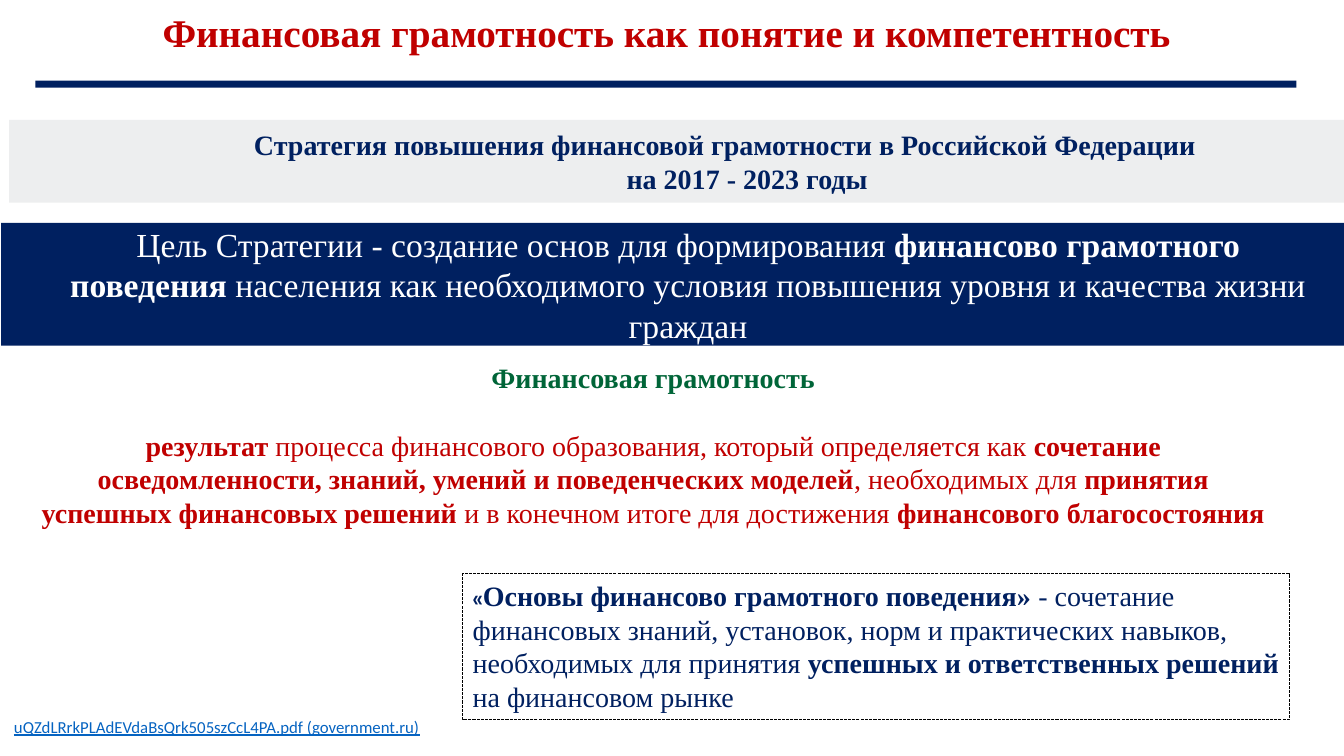
from lxml.etree import SubElement
from pptx import Presentation
from pptx.dml.color import RGBColor as Rgb
from pptx.enum.dml import MSO_LINE as Dash
from pptx.enum.shapes import MSO_SHAPE as Kind
from pptx.enum.text import MSO_ANCHOR as Anchor, PP_ALIGN as Align
from pptx.oxml.ns import qn
from pptx.util import Inches, Pt

WIDE, HIGH = Inches(13.33), Inches(7.5)
SERIF = "Times New Roman"

THEME = {
    "navy": "002060", "grey": "DCDEE0", "black": "000000",
    "text": {  # font, size, colour
        "title": (SERIF, 28, "C00000"),
        "plan": (SERIF, 20, "002060"),
        "goal": (SERIF, 24, "FFFFFF"),
        "term": (SERIF, 20, "006538"),
        "sense": (SERIF, 20, "C00000"),
        "quote": ("Arial Narrow", 16, "002060"),
        "link": ("Calibri", 12, "0563C1"),
    },
}

# Text between asterisks is bold. Each paragraph is a list of (style, text).
PLAN = [
    [("plan", "*Стратегия повышения финансовой грамотности в Российской Федерации*")],
    [("plan", "*на 2017 - 2023 годы*")],
]
GOAL = [[("goal", "Цель Стратегии - создание основ для формирования *финансово "
                  "грамотного поведения* населения как необходимого условия "
                  "повышения уровня и качества жизни граждан")]]
TERM = [
    [("term", "*Финансовая грамотность*")],
    [("sense", "*результат* процесса финансового образования, который определяется "
               "как *сочетание осведомленности, знаний, умений и поведенческих "
               "моделей*, необходимых для *принятия успешных финансовых решений *"
               "и в конечном итоге для достижения *финансового благосостояния*")],
]
BASICS = [[("quote", "*«*"),
           ("plan", "*Основы финансово грамотного поведения» *- сочетание финансовых "
                    "знаний, установок, норм и практических навыков, необходимых для "
                    "принятия *успешных и ответственных решений *на финансовом рынке")]]
TITLE = [[("title", "*Финансовая грамотность как понятие и компетентность*")]]
LINK = [[("link", "uQZdLRrkPLAdEVdaBsQrk505szCcL4PA.pdf (government.ru)")]]

# Places are left, top, width, height in per cent of the slide.
PARTS = [
    {"at": (0.68, 15.87, 100, 10.93), "fill": "grey", "alpha": 50, "text": PLAN,
     "pad": 0, "mid": True, "align": Align.CENTER, "indents": (0.87, 1.31)},
    {"at": (0.08, 29.47, 100.28, 16.27), "fill": "navy"},
    {"at": (2.63, 10.67, 93.83, 0.93), "fill": "navy"},
    {"at": (4.28, 29.07, 93.83, 17.07), "text": GOAL, "pad": 0.03, "mid": True,
     "align": Align.CENTER},
    {"at": (1.95, 47.07, 93.3, 23.73), "text": TERM, "align": Align.CENTER, "gap": 24},
    {"at": (34.43, 75.87, 61.5, 19.33), "line": "black", "text": BASICS},
    {"at": (6.83, 0.4, 85.5, 7.6), "text": TITLE, "align": Align.CENTER},
    {"at": (0.3, 94.13, 50.33, 4), "text": LINK, "under": True},
]


def apply(target, values):
    for name, value in values.items():
        setattr(target, name, value)


def paint(shape, part):
    shape.shadow.inherit = False
    if "fill" in part:
        shape.fill.solid()
        shape.fill.fore_color.rgb = Rgb.from_string(THEME[part["fill"]])
    else:
        shape.fill.background()
    if "alpha" in part:
        tint = shape.fill._xPr.find(".//" + qn("a:srgbClr"))
        SubElement(tint, qn("a:alpha")).set("val", str(part["alpha"] * 1000))
    if "line" in part:
        shape.line.color.rgb = Rgb.from_string(THEME[part["line"]])
        apply(shape.line, {"width": Pt(0.75), "dash_style": Dash.SQUARE_DOT})
    else:
        shape.line.fill.background()


def add_runs(para, pieces, under):
    for style, text in pieces:
        face, size, tone = THEME["text"][style]
        for index, words in enumerate(text.split("*")):
            if words:
                run = para.add_run()
                run.text = words
                apply(run.font, {"name": face, "size": Pt(size),
                                 "bold": index % 2 == 1, "underline": under})
                run.font.color.rgb = Rgb.from_string(tone)


def write(frame, part):
    apply(frame, {"word_wrap": True,
                  "vertical_anchor": Anchor.MIDDLE if part.get("mid") else Anchor.TOP})
    if "pad" in part:
        sides = ("left", "top", "right", "bottom")
        apply(frame, {f"margin_{side}": Inches(part["pad"]) for side in sides})
    for index, pieces in enumerate(part["text"]):
        para = frame.add_paragraph() if index else frame.paragraphs[0]
        para.alignment = part.get("align", Align.LEFT)
        if index and "gap" in part:
            para.space_before = Pt(part["gap"])
        if "indents" in part:
            para._p.get_or_add_pPr().set("marL", str(Inches(part["indents"][index])))
        add_runs(para, pieces, part.get("under", False))


def main():
    deck = Presentation()
    apply(deck, {"slide_width": WIDE, "slide_height": HIGH})
    shapes = deck.slides.add_slide(deck.slide_layouts[6]).shapes
    for part in PARTS:
        box = [int(share * side / 100)
               for share, side in zip(part["at"], (WIDE, HIGH) * 2)]
        if "fill" in part or "line" in part:
            shape = shapes.add_shape(Kind.RECTANGLE, *box)
            paint(shape, part)
        else:
            shape = shapes.add_textbox(*box)
        if "text" in part:
            write(shape.text_frame, part)
    deck.save("out.pptx")


if __name__ == "__main__":
    main()
